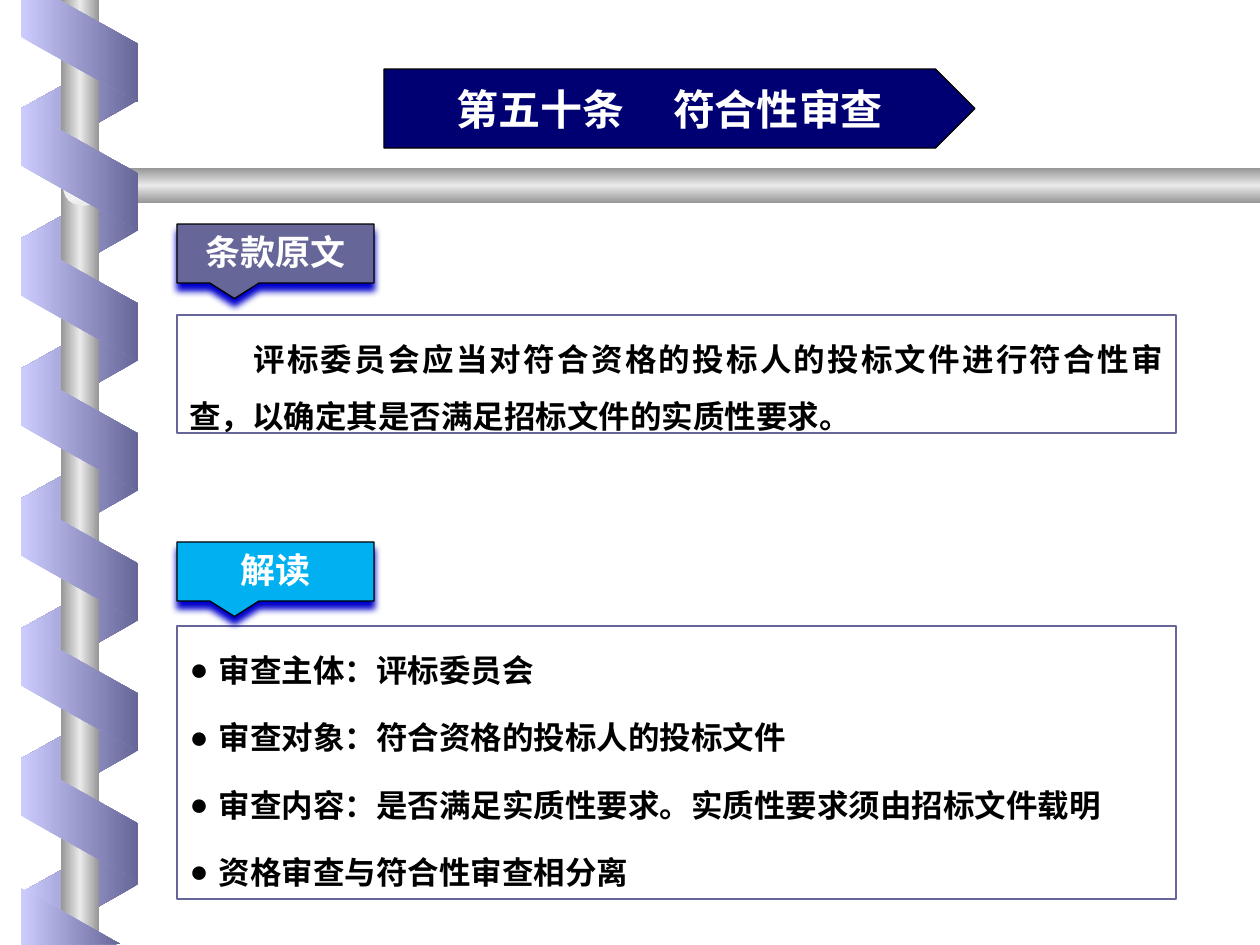
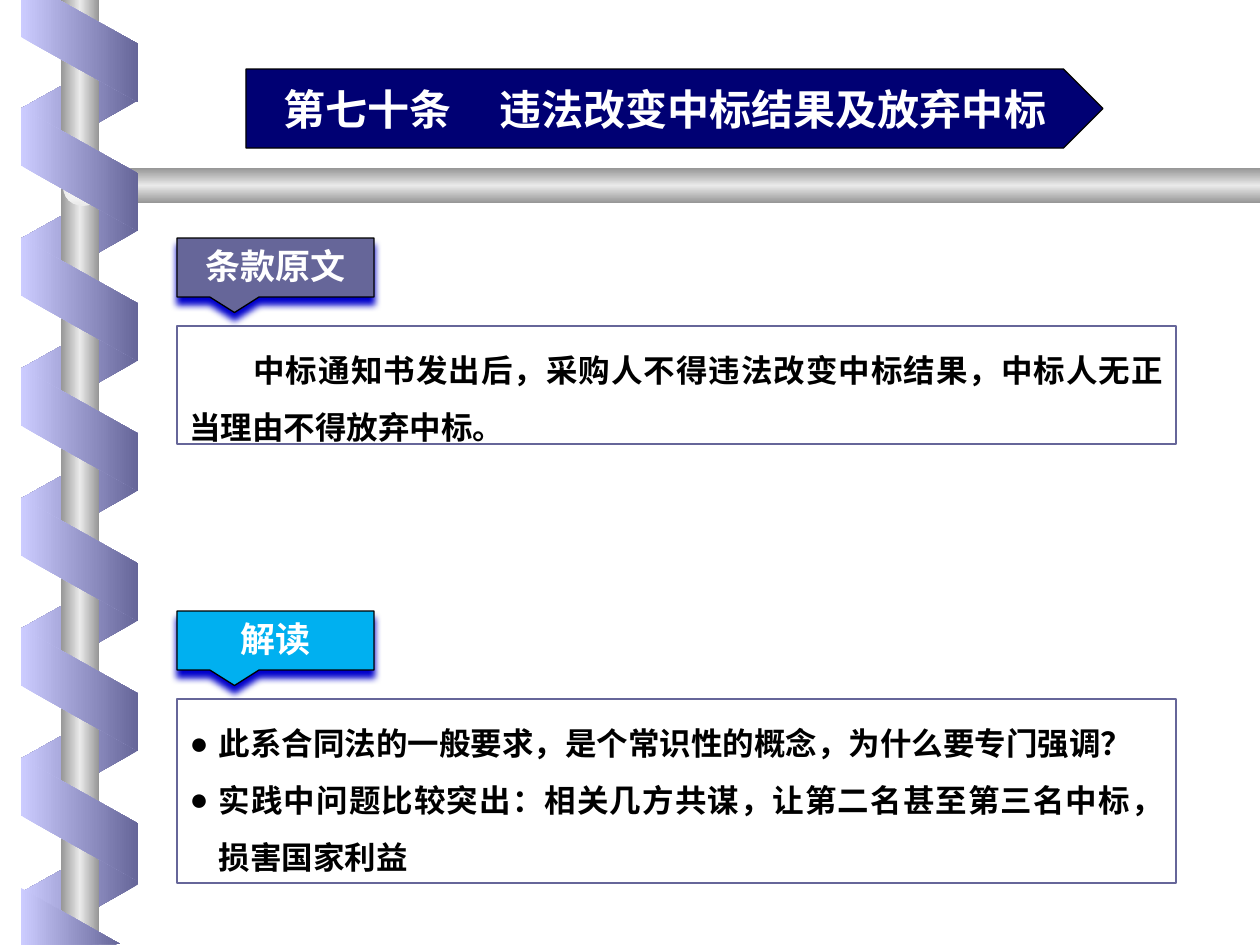
import pptx
import pptx.util
import pptx.dml.color
import pptx.enum.shapes
import pptx.enum.text
import pptx.oxml
import pptx.oxml.ns
from lxml import etree

EMU_PER_PX = 914400 / 126
COLORS = {
    "text": "000000", "white": "FFFFFF", "banner": "000073",
    "clause": "666699", "reading": "00B0F0", "shadow": "0000CC",
    "light": "CCCCFF", "dark": "666699",
    "metal": "969696", "shine": "EAEAEA", "joint": "FEFFFF",
}
CJK_FONT = "Noto Sans CJK SC"
TITLE_FORMAT = {"size": 24, "name": "Times New Roman", "color": "white"}
LABEL_FORMAT = {"size": 20, "name": "Times New Roman", "color": "white"}
BODY_FORMAT = {"size": 18, "name": CJK_FONT, "color": "text"}
CENTER = {"alignment": pptx.enum.text.PP_ALIGN.CENTER}
JUSTIFIED = {"alignment": pptx.enum.text.PP_ALIGN.JUSTIFY, "line_spacing": 1.5}
SHAPES = pptx.enum.shapes.MSO_SHAPE
ANCHORS = pptx.enum.text.MSO_ANCHOR

PANEL_LEFT, PANEL_WIDTH = 177, 999
LABEL_WIDTH, LABEL_HEIGHT = 197, 59
BANNER_TOP, BANNER_HEIGHT = 69, 79
BANNER_POINT = BANNER_HEIGHT // 2
GAP_POINTS = 22
BULLET_INDENT, FIRST_LINE_INDENT = 29, 64

SLIDES = [
    {
        "title": ("第五十条", "符合性审查"), "banner": (384, 591),
        "label_tops": (224, 542), "clause_box": (315, 118), "list_box": (626, 273),
        "clause": "评标委员会应当对符合资格的投标人的投标文件进行符合性审查，"
                  "以确定其是否满足招标文件的实质性要求。",
        "points": ["审查主体：评标委员会",
                   "审查对象：符合资格的投标人的投标文件",
                   "审查内容：是否满足实质性要求。实质性要求须由招标文件载明",
                   "资格审查与符合性审查相分离"],
        "point_gap": 6,
    },
    {
        "title": ("第七十条", "违法改变中标结果及放弃中标"), "banner": (246, 857),
        "label_tops": (238, 611), "clause_box": (326, 118), "list_box": (699, 184),
        "clause": "中标通知书发出后，采购人不得违法改变中标结果，"
                  "中标人无正当理由不得放弃中标。",
        "points": ["此系合同法的一般要求，是个常识性的概念，为什么要专门强调？",
                   "实践中问题比较突出：相关几方共谋，让第二名甚至第三名中标，损害国家利益"],
        "point_gap": 0,
    },
]


def px(length):
    return pptx.util.Emu(round(length * EMU_PER_PX))


def rgb(name):
    return pptx.dml.color.RGBColor.from_string(COLORS[name])


def drawing_xml(text):
    """Parse DrawingML whose root element is written without its namespace."""
    head, rest = text.split(" ", 1)
    return pptx.oxml.parse_xml(f"{head} {pptx.oxml.ns.nsdecls('a')} {rest}")


def place(shape, left, top, width, height):
    box = {"left": left, "top": top, "width": width, "height": height}
    for name, value in box.items():
        setattr(shape, name, px(value))


def paint(shape, fill=None, line=None, line_width=0.75):
    if fill:
        shape.fill.solid()
        shape.fill.fore_color.rgb = rgb(fill)
    else:
        shape.fill.background()
    if line:
        shape.line.color.rgb = rgb(line)
        shape.line.width = pptx.util.Pt(line_width)
    else:
        shape.line.fill.background()


def add_preset(slide, kind, box, adjustment=None):
    shape = slide.shapes.add_shape(kind, *map(px, box))
    shape.shadow.inherit = False
    if adjustment is not None:
        shape.adjustments[0] = adjustment
    return shape


def paint_gradient(shape, names, angle=0, radial=False):
    paint(shape, fill=names[0])
    last = len(names) - 1
    stops = "".join(
        f'<a:gs pos="{100000 * i // last}"><a:srgbClr val="{COLORS[name]}"/></a:gs>'
        for i, name in enumerate(names))
    course = f'<a:lin ang="{angle * 60000}" scaled="0"/>'
    if radial:
        course = ('<a:path path="shape"><a:fillToRect l="50000" t="50000" '
                  'r="50000" b="50000"/></a:path>')
    gradient = drawing_xml(f'<a:gradFill rotWithShape="0"><a:gsLst>{stops}</a:gsLst>'
                           f'{course}</a:gradFill>')
    properties = shape.element.spPr
    properties.replace(properties.find(pptx.oxml.ns.qn("a:solidFill")), gradient)


def add_ribbon_turn(slide, top, front):
    shape = add_preset(slide, SHAPES.PARALLELOGRAM, (18, top, 123, 117), 0.56)
    shape.rotation = 270 if front else 90
    if not front:
        shape.element.spPr.xfrm.set("flipH", "1")
    paint_gradient(shape, ("light", "dark") if front else ("dark", "light"))


def add_ribbon_end(slide, points):
    builder = slide.shapes.build_freeform(*points[0], scale=EMU_PER_PX)
    builder.add_line_segments(points[1:], close=True)
    shape = builder.convert_to_shape()
    shape.shadow.inherit = False
    paint_gradient(shape, ("light", "dark"))


def draw_spiral_frame(slide):
    """Draw the ribbon winding round the upright rod, and the cross bar."""
    for top in [*range(46, 800, 130), 830]:
        add_ribbon_turn(slide, top, front=False)
    metal = ("metal", "shine", "metal")
    rod = add_preset(slide, SHAPES.RECTANGLE, (61, 0, 38, 945))
    paint_gradient(rod, metal)
    bar = add_preset(slide, SHAPES.PENTAGON, (76, 168, 1184, 35), 0.59)
    bar.element.spPr.xfrm.set("flipH", "1")
    paint_gradient(bar, metal, angle=90)
    joint = add_preset(slide, SHAPES.OVAL, (63, 168, 40, 38))
    paint_gradient(joint, ("joint", "shine"), radial=True)
    for top in range(111, 800, 130):
        add_ribbon_turn(slide, top, front=True)
    add_ribbon_end(slide, [(21, 0), (21, 37), (138, 102), (138, 44), (59, 0)])
    add_ribbon_end(slide, [(120, 944), (21, 888), (21, 945)])


def move_to_layout(slide, layout):
    """Hand the drawn frame to the layout, so that every slide shows it."""
    for placeholder in list(layout.placeholders):
        if placeholder.placeholder_format.idx >= 10:
            layout.shapes.element.remove(placeholder.element)
    for shape in list(slide.shapes):
        if not shape.is_placeholder:
            layout.shapes.element.append(shape.element)


def add_run(paragraph, text, text_format):
    run = paragraph.add_run()
    run.text = text
    values = {"name": text_format["name"], "bold": True,
              "size": pptx.util.Pt(text_format["size"])}
    for name, value in values.items():
        setattr(run.font, name, value)
    run.font.color.rgb = rgb(text_format["color"])
    properties = run._r.get_or_add_rPr()
    etree.SubElement(properties, pptx.oxml.ns.qn("a:ea"), typeface=CJK_FONT)
    return properties


def format_paragraph(paragraph, values, margin=0, indent=0):
    properties = paragraph._p.get_or_add_pPr()
    attributes = {"marL": px(margin), "indent": px(indent), "hangingPunct": 0}
    for name, value in attributes.items():
        properties.set(name, str(value))
    for name, value in values.items():
        setattr(paragraph, name, value)


def set_frame(shape, anchor=ANCHORS.TOP):
    frame = shape.text_frame
    values = {"word_wrap": True, "vertical_anchor": anchor,
              "auto_size": pptx.enum.text.MSO_AUTO_SIZE.NONE}
    for name, value in values.items():
        setattr(frame, name, value)
    return frame


def set_banner_title(slide, words, left, width):
    """Lay the title over an arrow banner, centred clear of the arrow's point."""
    banner = add_preset(slide, SHAPES.PENTAGON, (left, BANNER_TOP, width, BANNER_HEIGHT), 0.5)
    paint(banner, "banner", "text")
    title = slide.shapes.title
    slide.shapes.element.append(title.element)
    place(title, left, BANNER_TOP, width - BANNER_POINT // 2, BANNER_HEIGHT)
    paragraph = set_frame(title, ANCHORS.MIDDLE).paragraphs[0]
    format_paragraph(paragraph, CENTER)
    article, subject = words
    add_run(paragraph, article, TITLE_FORMAT)
    add_run(paragraph, " ", TITLE_FORMAT).set("spc", str(GAP_POINTS * 100))
    add_run(paragraph, subject, TITLE_FORMAT)


def add_label(slide, text, top, fill):
    label = add_preset(slide, SHAPES.RECTANGULAR_CALLOUT,
                       (PANEL_LEFT, top, LABEL_WIDTH, LABEL_HEIGHT), -0.208)
    label.adjustments[1] = 0.764
    paint(label, fill, "text")
    effects = label.element.spPr.find(pptx.oxml.ns.qn("a:effectLst"))
    effects.append(drawing_xml(
        '<a:outerShdw blurRad="50800" dist="50800" dir="5400000" algn="ctr" '
        f'rotWithShape="0"><a:srgbClr val="{COLORS["shadow"]}"/></a:outerShdw>'))
    paragraph = set_frame(label).paragraphs[0]
    format_paragraph(paragraph, CENTER)
    add_run(paragraph, text, LABEL_FORMAT)


def add_clause(slide, text, top, height):
    panel = add_preset(slide, SHAPES.RECTANGLE, (PANEL_LEFT, top, PANEL_WIDTH, height))
    paint(panel, line="clause", line_width=1.5)
    paragraph = set_frame(panel).paragraphs[0]
    format_paragraph(paragraph, JUSTIFIED, indent=FIRST_LINE_INDENT)
    add_run(paragraph, text, BODY_FORMAT)


def set_points(slide, points, gap, top, height):
    panel = slide.placeholders[1]
    place(panel, PANEL_LEFT, top, PANEL_WIDTH, height)
    paint(panel, line="clause", line_width=1.5)
    frame = set_frame(panel)
    for i, point in enumerate(points):
        paragraph = frame.add_paragraph() if i else frame.paragraphs[0]
        properties = paragraph._p.get_or_add_pPr()
        etree.SubElement(properties, pptx.oxml.ns.qn("a:buChar"), char="●")
        spacing = {"space_before": pptx.util.Pt(gap if i else 0)}
        format_paragraph(paragraph, JUSTIFIED | spacing, BULLET_INDENT, -BULLET_INDENT)
        add_run(paragraph, point, BODY_FORMAT)


def main():
    presentation = pptx.Presentation()
    presentation.slide_width, presentation.slide_height = px(1260), px(945)
    layout = presentation.slide_layouts[1]
    for number, content in enumerate(SLIDES):
        slide = presentation.slides.add_slide(layout)
        if number == 0:
            draw_spiral_frame(slide)
            move_to_layout(slide, layout)
        set_banner_title(slide, content["title"], *content["banner"])
        clause_top, reading_top = content["label_tops"]
        add_label(slide, "条款原文", clause_top, "clause")
        add_clause(slide, content["clause"], *content["clause_box"])
        add_label(slide, "解读", reading_top, "reading")
        set_points(slide, content["points"], content["point_gap"], *content["list_box"])
    presentation.save("out.pptx")


if __name__ == "__main__":
    main()
